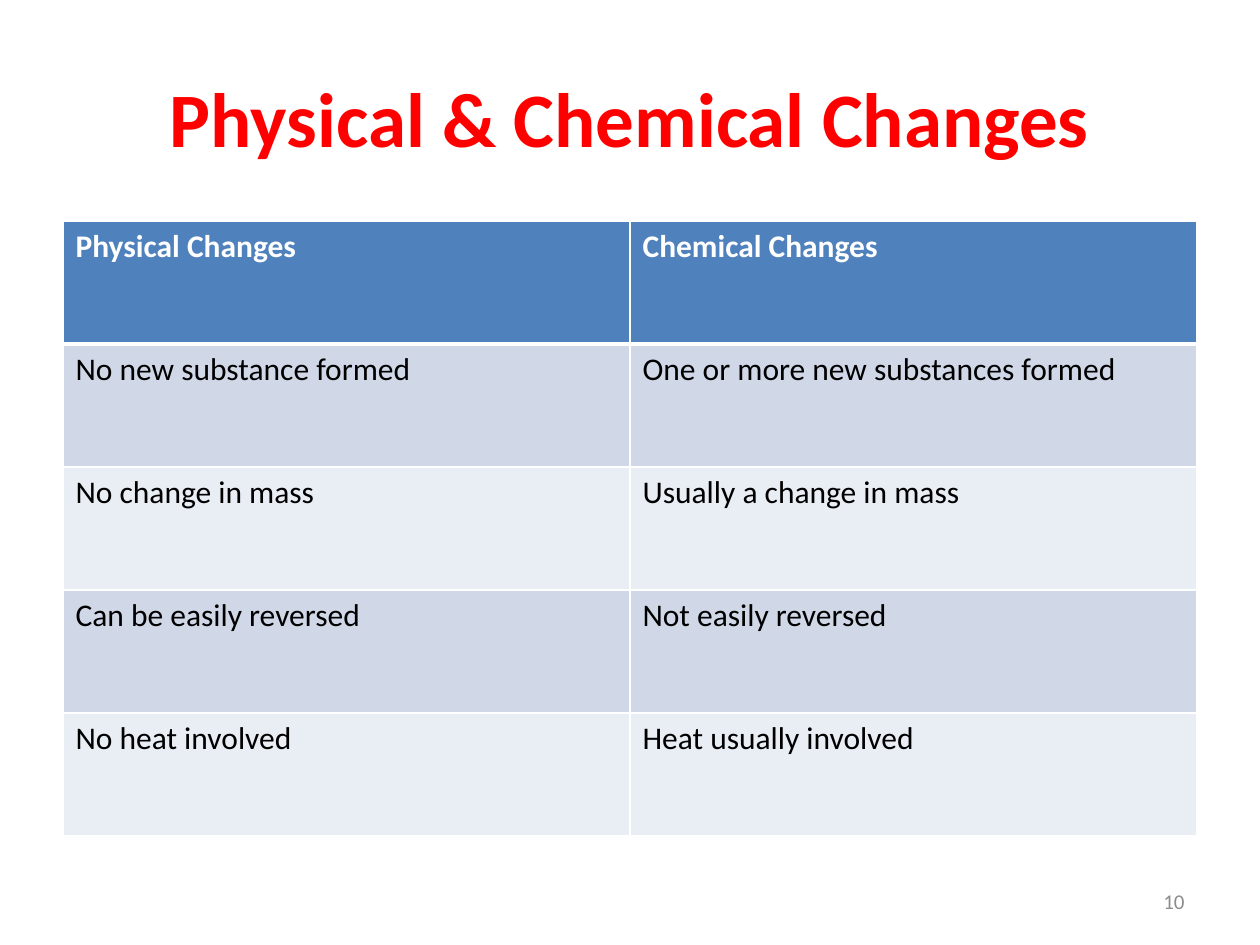
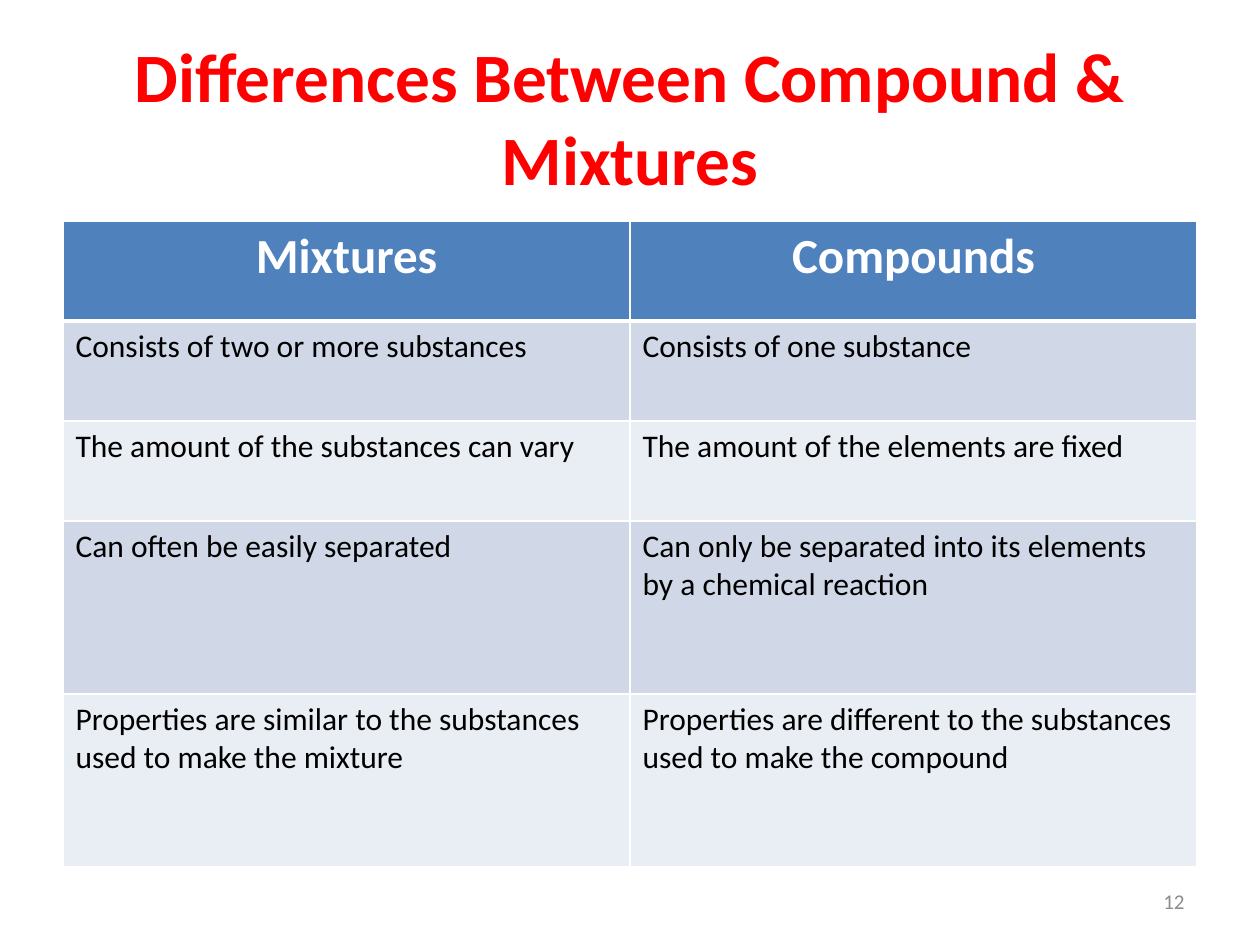
from lxml.etree import SubElement
from pptx import Presentation
from pptx.dml.color import RGBColor
from pptx.enum.text import MSO_ANCHOR as Anchor, PP_ALIGN as Align
from pptx.oxml.ns import qn
from pptx.util import Emu, Pt

# Shared look
EMU_PER_PX = 914400 / 126
FONT = "Calibri"
COLORS = {
    "title": "FF0000",
    "header": "4F81BD",
    "header_text": "FFFFFF",
    "odd_row": "D0D8E8",
    "even_row": "E9EDF4",
    "body_text": "000000",
    "rule": "FFFFFF",
    "page_number": "8C8C8C",
}
TITLE_BOX = (63, 38, 1134, 157)
PAGE_NUMBER_BOX = (903, 876, 294, 50)
TABLE_LEFT, TABLE_TOP, TABLE_WIDTH = 63, 221, 1134
BODY_SIZE = 18

# Content
CHANGES = [
    ("Physical Changes", "Chemical Changes"),
    ("No new substance formed", "One or more new substances formed"),
    ("No change in mass", "Usually a change in mass"),
    ("Can be easily reversed", "Not easily reversed"),
    ("No heat involved", "Heat usually involved"),
]
DIFFERENCES = [
    ("Mixtures", "Compounds"),
    ("Consists of two or more substances", "Consists of one substance"),
    ("The amount of the substances can vary", "The amount of the elements are fixed"),
    ("Can often be easily separated",
     "Can only be separated into its elements by a chemical reaction"),
    ("Properties are similar to the substances used to make the mixture",
     "Properties are different to the substances used to make the compound"),
]


def px(length):
    return Emu(round(length * EMU_PER_PX))


def write(frame, text, size, color, bold=False, align=Align.LEFT):
    frame.text = text
    frame.word_wrap = True
    for paragraph in frame.paragraphs:
        paragraph.alignment = align
        for run in paragraph.runs:
            run.font.name = FONT
            run.font.size = Pt(size)
            run.font.bold = bold
            run.font.color.rgb = RGBColor.from_string(COLORS[color])


def add_label(slide, box, text, size, color, bold, align):
    frame = slide.shapes.add_textbox(*map(px, box)).text_frame
    write(frame, text, size, color, bold, align)
    frame.vertical_anchor = Anchor.MIDDLE


def rule_cell(cell, top, bottom):
    """Draw the four borders, which must stand before the fill."""
    properties = cell._tc.get_or_add_tcPr()
    widths = {"a:lnL": 1, "a:lnR": 1, "a:lnT": top, "a:lnB": bottom}
    for position, (side, width) in enumerate(widths.items()):
        line = SubElement(properties, qn(side), w=str(Pt(width)))
        fill = SubElement(line, qn("a:solidFill"))
        SubElement(fill, qn("a:srgbClr"), val=COLORS["rule"])
        properties.insert(position, line)


def add_comparison(slide, rows, heights, header_size, header_align):
    columns = len(rows[0])
    table = slide.shapes.add_table(
        len(rows), columns, px(TABLE_LEFT), px(TABLE_TOP),
        px(TABLE_WIDTH), px(sum(heights))).table
    for column in table.columns:
        column.width = px(TABLE_WIDTH // columns)

    for r, (texts, height) in enumerate(zip(rows, heights)):
        table.rows[r].height = px(height)
        band = "header" if r == 0 else "odd_row" if r % 2 else "even_row"
        for c, text in enumerate(texts):
            cell = table.cell(r, c)
            cell.fill.solid()
            cell.fill.fore_color.rgb = RGBColor.from_string(COLORS[band])
            rule_cell(cell, top=3 if r == 1 else 1, bottom=3 if r == 0 else 1)
            if r == 0:
                write(cell.text_frame, text, header_size, "header_text", True, header_align)
            else:
                write(cell.text_frame, text, BODY_SIZE, "body_text")


def add_page(deck, title, title_size, number):
    slide = deck.slides.add_slide(deck.slide_layouts[6])
    add_label(slide, TITLE_BOX, title, title_size, "title", True, Align.CENTER)
    add_label(slide, PAGE_NUMBER_BOX, str(number), 12, "page_number", False, Align.RIGHT)
    return slide


def main():
    deck = Presentation()
    deck.slide_width, deck.slide_height = px(1260), px(945)

    # Physical and chemical changes
    changes = add_page(deck, "Physical & Chemical Changes", 44, 10)
    add_comparison(changes, CHANGES, [123] * 5, BODY_SIZE, Align.LEFT)

    # Compounds and mixtures
    differences = add_page(deck, "Differences Between Compound & Mixtures", 39.6, 12)
    add_comparison(differences, DIFFERENCES, [100] * 3 + [173] * 2, 28, Align.CENTER)

    deck.save("out.pptx")


if __name__ == "__main__":
    main()
